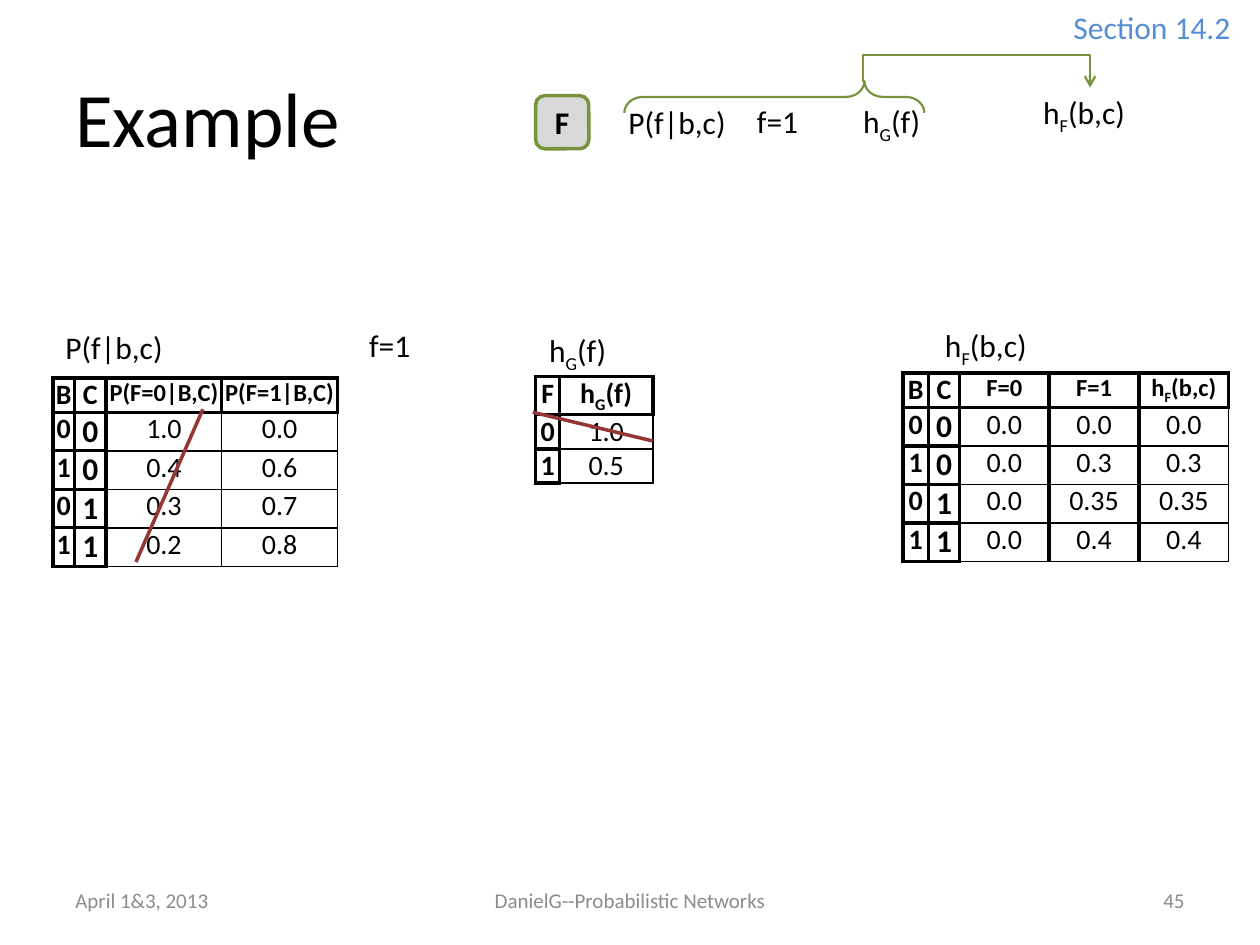
from dataclasses import dataclass

from lxml.etree import SubElement
from pptx import Presentation
from pptx.dml.color import RGBColor
from pptx.enum.shapes import MSO_CONNECTOR as Link, MSO_SHAPE as Preset
from pptx.enum.text import MSO_ANCHOR as Anchor, MSO_AUTO_SIZE as Fit, PP_ALIGN as Align
from pptx.oxml.ns import qn
from pptx.util import Cm, Pt

BLACK = RGBColor(0x00, 0x00, 0x00)
GREY = RGBColor(0x8C, 0x8C, 0x8C)
LIGHT_GREY = RGBColor(0xD9, 0xD9, 0xD9)
GREEN = RGBColor(0x77, 0x93, 0x3C)
RED = RGBColor(0x95, 0x37, 0x35)
BLUE = RGBColor(0x55, 0x8E, 0xD5)
FONT = "Calibri"
HEAVY, THIN = 2.25, 1
LABEL_HEIGHT = 1.02
ROW_HEIGHT = 0.53


@dataclass
class Label:
    text: str
    left: float
    top: float
    width: float
    color: RGBColor = BLACK
    wrap: bool = True


@dataclass
class Footer:
    text: str
    left: float
    width: float
    align: Align


@dataclass
class Factor:
    left: float
    top: float
    height: float
    widths: list[float]
    rows: list[list[str]]
    keys: int
    heading_size: int
    divider: float = THIN


@dataclass
class Strike:
    start: tuple[float, float]
    end: tuple[float, float]


P_F, H_G, H_F, EVIDENCE = "P(f|b,c)", "h_G_(f)", "h_F_(b,c)", "f=1"

LABELS = [
    Label(P_F, 12.42, 1.96, 2.74),
    Label(EVIDENCE, 15.01, 1.93, 2.33),
    Label(H_G, 17.15, 1.93, 2.1),
    Label(H_F, 20.78, 1.75, 2.38),
    Label(P_F, 1.07, 6.48, 2.74),
    Label(EVIDENCE, 7.19, 6.45, 2.33),
    Label(H_G, 10.82, 6.55, 2.1),
    Label(H_F, 18.8, 6.45, 2.38),
    Label("Section 14.2", 21.39, 0.03, 3.86, BLUE, wrap=False),
]

FOOTERS = [
    Footer("April 1&3, 2013", 1.27, 5.93, Align.LEFT),
    Footer("DanielG--Probabilistic Networks", 8.68, 8.04, Align.CENTER),
    Footer("45", 18.2, 5.93, Align.RIGHT),
]

FACTORS = [
    Factor(1.07, 7.62, 3.73, [0.43, 0.64, 2.33, 2.33], [
        ["B", "C", "P(F=0|B,C)", "P(F=1|B,C)"],
        ["0", "0", "1.0", "0.0"],
        ["1", "0", "0.4", "0.6"],
        ["0", "1", "0.3", "0.7"],
        ["1", "1", "0.2", "0.8"],
    ], keys=2, heading_size=14),
    Factor(18.2, 7.52, 3.73, [0.52, 0.62, 1.81, 1.81, 1.81], [
        ["B", "C", "F=0", "F=1", H_F],
        ["0", "0", "0.0", "0.0", "0.0"],
        ["1", "0", "0.0", "0.3", "0.3"],
        ["0", "1", "0.0", "0.35", "0.35"],
        ["1", "1", "0.0", "0.4", "0.4"],
    ], keys=2, heading_size=14, divider=HEAVY),
    Factor(10.8, 7.59, 2.03, [0.48, 1.88], [
        ["F", H_G],
        ["0", "1.0"],
        ["1", "0.5"],
    ], keys=1, heading_size=16),
]

STRIKES = [
    Strike((2.74, 11.33), (4.09, 8.25)),
    Strike((13.16, 8.89), (10.74, 8.31)),
]


def write(frame, text: str, *, size: float = 18, color: RGBColor = BLACK,
          bold: bool = False, align: Align = Align.LEFT) -> None:
    paragraph = frame.paragraphs[0]
    paragraph.alignment = align
    for index, part in enumerate(text.split("_")):
        run = paragraph.add_run()
        run.text = part
        run.font.name = FONT
        run.font.size = Pt(size)
        run.font.bold = bold
        run.font.color.rgb = color
        if index % 2:
            run._r.get_or_add_rPr().set("baseline", "-25000")


def add_text(slide, box: tuple, text: str, *, fit: Fit = Fit.NONE,
             wrap: bool = True, anchor: Anchor = Anchor.MIDDLE, **style) -> None:
    frame = slide.shapes.add_textbox(*map(Cm, box)).text_frame
    frame.word_wrap = wrap
    frame.auto_size = fit
    frame.vertical_anchor = anchor
    write(frame, text, **style)


def add_outlined(slide, preset: Preset, box: tuple, width: float):
    outlined = slide.shapes.add_shape(preset, *map(Cm, box))
    outlined.shadow.inherit = False
    outlined.fill.background()
    outlined.line.color.rgb = GREEN
    outlined.line.width = Pt(width)
    return outlined


def add_line(slide, kind: Link, start: tuple, end: tuple, color: RGBColor, width: float):
    line = slide.shapes.add_connector(kind, *map(Cm, start + end))
    line.line.color.rgb = color
    line.line.width = Pt(width)
    SubElement(line._element.spPr, qn("a:effectLst"))
    return line


def add_message_arrow(slide) -> None:
    arrow = add_line(slide, Link.ELBOW, (19.75, -0.58), (19.63, 3.99), GREEN, 1.25)
    properties = arrow._element.spPr
    properties.find(qn("a:xfrm")).set("rot", str(270 * 60000))
    bends = properties.find(qn("a:prstGeom")).find(qn("a:avLst"))
    SubElement(bends, qn("a:gd"), name="adj1", fmla="val -450000")
    SubElement(properties.find(qn("a:ln")), qn("a:tailEnd"), type="arrow")


def set_borders(cell, **widths: float) -> None:
    properties = cell._tc.get_or_add_tcPr()
    for side, width in widths.items():
        border = SubElement(properties, qn(f"a:ln{side}"), w=str(Pt(width)))
        SubElement(SubElement(border, qn("a:solidFill")), qn("a:srgbClr"), val=str(BLACK))


def add_factor(slide, factor: Factor) -> None:
    count, last = len(factor.rows), len(factor.widths) - 1
    holder = slide.shapes.add_table(count, last + 1, *map(Cm, (
        factor.left, factor.top, sum(factor.widths), factor.height)))
    table = holder.table
    table.first_row = table.horz_banding = False
    for column, width in zip(table.columns, factor.widths):
        column.width = Cm(width)
    for row, values in enumerate(factor.rows):
        table.rows[row].height = Cm(ROW_HEIGHT)
        for col, value in enumerate(values):
            cell = table.cell(row, col)
            cell.margin_left = cell.margin_right = cell.margin_top = cell.margin_bottom = 0
            is_key = col < factor.keys
            is_bold = row == 0 or is_key
            size = 16
            if row == 0 and not is_key:
                size = factor.heading_size
            elif row and is_key and col == 1:
                size = 18
            write(cell.text_frame, value, size=size, bold=is_bold, align=Align.CENTER)
            if is_bold:
                set_borders(cell, L=HEAVY, R=HEAVY, T=HEAVY, B=HEAVY)
            else:
                set_borders(cell, L=HEAVY if col == factor.keys else factor.divider,
                            R=THIN if col == last else factor.divider,
                            T=HEAVY if row == 1 else THIN, B=THIN)
            cell.fill.background()
    holder.height = Cm(factor.height)


def main() -> None:
    deck = Presentation()
    deck.slide_width, deck.slide_height = Cm(25.4), Cm(19.05)
    slide = deck.slides.add_slide(deck.slide_layouts[6])

    add_text(slide, (1.27, 0.76, 22.86, 3.18), "Example", size=44)
    for footer in FOOTERS:
        add_text(slide, (footer.left, 17.65, footer.width, 1.01), footer.text,
                 size=12, color=GREY, align=footer.align)

    node = add_outlined(slide, Preset.ROUNDED_RECTANGLE, (10.8, 1.93, 1.07, 1.07), 2)
    node.fill.solid()
    node.fill.fore_color.rgb = LIGHT_GREY
    node.text_frame.vertical_anchor = Anchor.MIDDLE
    write(node.text_frame, "F", bold=True, align=Align.CENTER)

    brace = add_outlined(slide, Preset.LEFT_BRACE, (15.29, -1.07, 0.64, 6.05), 1.25)
    brace.rotation = 90
    brace.adjustments[0], brace.adjustments[1] = 0.58, 0.2
    add_message_arrow(slide)

    for factor in FACTORS:
        add_factor(slide, factor)
    for label in LABELS:
        add_text(slide, (label.left, label.top, label.width, LABEL_HEIGHT), label.text,
                 color=label.color, wrap=label.wrap, fit=Fit.SHAPE_TO_FIT_TEXT, anchor=Anchor.TOP)
    for strike in STRIKES:
        add_line(slide, Link.STRAIGHT, strike.start, strike.end, RED, 2)

    deck.save("out.pptx")


if __name__ == "__main__":
    main()
